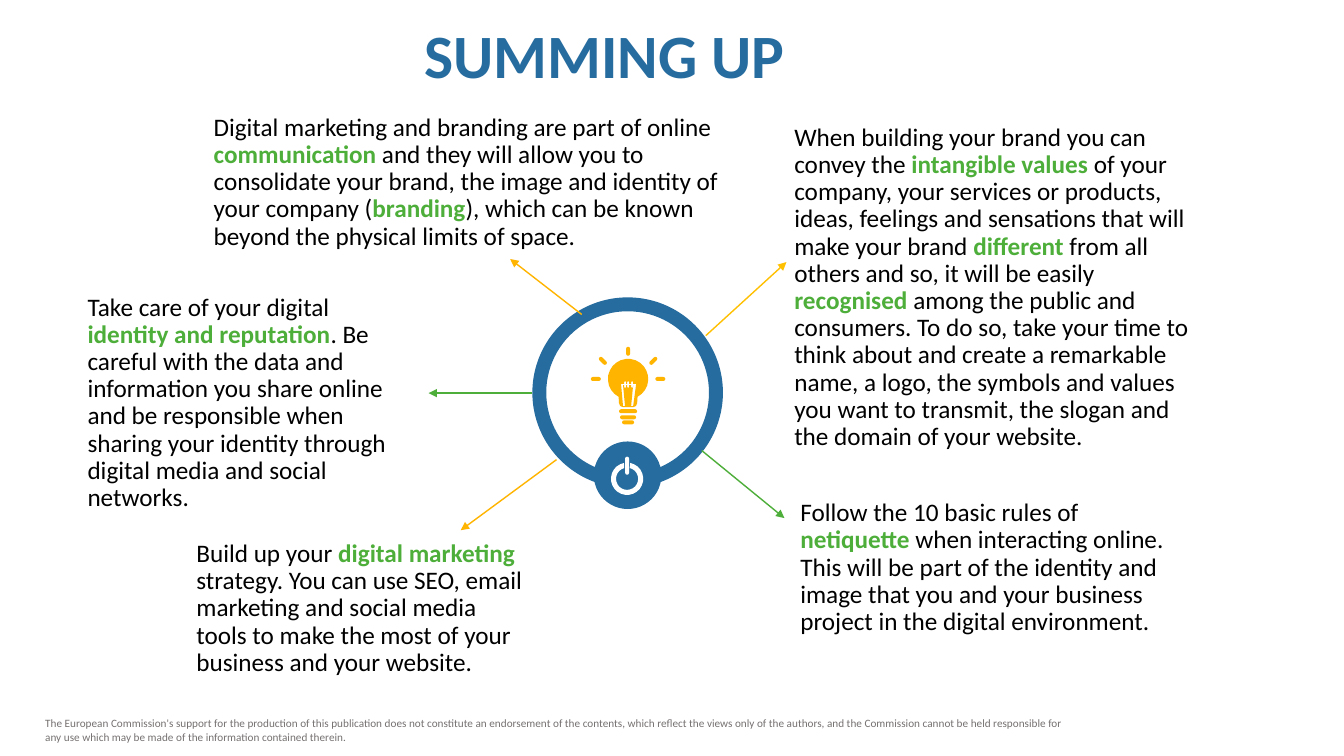
import math

from lxml import etree
from pptx import Presentation
from pptx.dml.color import RGBColor
from pptx.enum.shapes import MSO_CONNECTOR, MSO_SHAPE
from pptx.enum.text import MSO_ANCHOR
from pptx.oxml.ns import qn
from pptx.util import Inches, Pt

STRAIGHT = MSO_CONNECTOR.STRAIGHT
DONUT, OVAL = MSO_SHAPE.DONUT, MSO_SHAPE.OVAL
TOP, MIDDLE = MSO_ANCHOR.TOP, MSO_ANCHOR.MIDDLE
FONT = "Calibri"
UNITS = 1000  # outline units to the inch
COLORS = {
    "blue": "266C9F",
    "green": "4EAE3A",
    "yellow": "FFB500",
    "amber": "FFC000",
    "black": "000000",
    "grey": "767171",
    "white": "FFFFFF",
}
RGB = {name: RGBColor.from_string(value) for name, value in COLORS.items()}


def arc(x, y, radius, start, end, step=15):
    """Points along a circle, with angles in degrees clockwise from the right."""
    steps = math.ceil(abs(end - start) / step)
    angles = [math.radians(start + (end - start) * i / steps) for i in range(steps + 1)]
    return [(x + radius * math.cos(a), y + radius * math.sin(a)) for a in angles]


def capsule(x1, y1, x2, y2, radius=0.02):
    """Outline of a bar with round ends."""
    angle = math.degrees(math.atan2(y2 - y1, x2 - x1))
    return (arc(x2, y2, radius, angle - 90, angle + 90, 45)
            + arc(x1, y1, radius, angle + 90, angle + 270, 45))


deck = Presentation()
deck.slide_width, deck.slide_height = Inches(13.33), Inches(7.5)
page = deck.slides.add_slide(deck.slide_layouts[6])

# Central ring and power disc
for kind, left, top, size in ((DONUT, 5.28, 2.95, 1.89), (OVAL, 5.89, 4.38, 0.67)):
    ring = page.shapes.add_shape(kind, Inches(left), Inches(top), Inches(size), Inches(size))
    if kind == DONUT:
        ring.adjustments[0] = 0.073
    ring.shadow.inherit = False
    ring.fill.solid()
    ring.fill.fore_color.rgb = RGB["blue"]
    ring.line.fill.background()

# Light bulb: glass, filament, base and rays
bulb_x, bulb_y = 6.23, 3.76
glass = (arc(bulb_x, bulb_y, 0.2, 118, 422)
         + arc(6.28, 4.0, 0.04, 0, 90, 45) + arc(6.18, 4.0, 0.04, 90, 180, 45))
prongs = (6.2, 6.23, 6.27)
filament = [(6.16, 3.81)]
for x in prongs:
    filament += [(x - 0.01, 3.81), (x - 0.01, 3.79), (x, 3.78), (x + 0.01, 3.79), (x + 0.01, 3.81)]
filament += [(6.31, 3.81), (6.28, 4.03), (6.26, 4.03), (6.28, 3.82)]
for x in reversed(prongs):
    filament += [(x + 0.01, 3.82), (x + 0.01, 3.84), (x, 3.85), (x - 0.01, 3.84), (x - 0.01, 3.82)]
filament += [(6.18, 3.82), (6.2, 4.03), (6.18, 4.03)]
bulb = [glass, filament, capsule(bulb_x, 3.46, bulb_x, 3.51)]
for y, half in ((4.08, 0.07), (4.14, 0.06), (4.19, 0.04)):
    bulb.append(capsule(bulb_x - half, y, bulb_x + half, y))
for side in (-1, 1):
    bulb.append(capsule(bulb_x + side * 0.29, bulb_y, bulb_x + side * 0.35, bulb_y))
    bulb.append(capsule(bulb_x + side * 0.23, 3.6, bulb_x + side * 0.27, 3.56))

# Power symbol: open ring and bar
power = [arc(6.22, 4.75, 0.16, -79, 259) + arc(6.22, 4.75, 0.11, 255, -75),
         capsule(6.22, 4.55, 6.22, 4.69)]

for outlines, color in ((bulb, "yellow"), (power, "white")):
    builder = None
    for outline in outlines:
        points = [(x * UNITS, y * UNITS) for x, y in outline]
        if builder is None:
            builder = page.shapes.build_freeform(*points[0], scale=Inches(1) / UNITS)
        else:
            builder.move_to(*points[0])
        builder.add_line_segments(points[1:], close=True)
    icon = builder.convert_to_shape()
    icon.shadow.inherit = False
    icon.fill.solid()
    icon.fill.fore_color.rgb = RGB[color]
    icon.line.fill.background()

# Arrows from the ring to the messages
arrows = (
    (5.28, 3.9, 4.25, 3.9, "green"),
    (6.96, 4.47, 7.78, 5.14, "green"),
    (5.77, 3.12, 5.06, 2.57, "yellow"),
    (7.0, 3.33, 7.8, 2.6, "amber"),
    (5.52, 4.56, 4.57, 5.26, "yellow"),
)
for x1, y1, x2, y2, color in arrows:
    arrow = page.shapes.add_connector(STRAIGHT, Inches(x1), Inches(y1), Inches(x2), Inches(y2))
    arrow.line.color.rgb = RGB[color]
    arrow.line.width = Pt(1)
    etree.SubElement(arrow.line._get_or_add_ln(), qn("a:tailEnd"), type="triangle")
    etree.SubElement(arrow._element.spPr, qn("a:effectLst"))

# Texts: place, size, colour, anchor, line spacing, then plain and highlighted spans in turn
message = (18, "black", MIDDLE, 0.9)
texts = (
    ((0.35, 7.06, 10.46, 0.37), (8, "grey", TOP, 1.0), (
        "The European Commission's support for the production of this publication does not "
        "constitute an endorsement of the contents, which reflect the views only of the authors, "
        "and the Commission cannot be held responsible for any use which may be made of the "
        "information contained therein.",)),
    ((4.11, 0.2, 3.8, 0.79), (44, "blue", TOP, 0.9), ("SUMMING UP",)),
    ((1.85, 5.31, 3.44, 1.46), message, (
        "Build up your ", "digital marketing ",
        "strategy. You can use SEO, email marketing and social media tools to make the most of "
        "your business and your website.")),
    ((7.78, 1.17, 4.26, 3.37), message, (
        "When building your brand you can convey the ", "intangible values",
        " of your company, your services or products, ideas, feelings and sensations that will "
        "make your brand ", "different", " from all others and so, it will be easily ",
        "recognised",
        " among the public and consumers. To do so, take your time to think about and create a "
        "remarkable name, a logo, the symbols and values you want to transmit, the slogan and "
        "the domain of your website.")),
    ((7.84, 4.91, 3.9, 1.73), (18, "black", TOP, 0.9), (
        "Follow the 10 basic rules of ", "netiquette",
        " when interacting online. This will be part of the identity and image that you and "
        "your business project in the digital environment.")),
    ((2.02, 1.08, 5.22, 1.46), message, (
        "Digital marketing and branding are part of online ", "communication",
        " and they will allow you to consolidate your brand, the image and identity of your "
        "company (", "branding", "), which can be known beyond the physical limits of space.")),
    ((0.77, 2.86, 3.37, 2.28), message, (
        "Take care of your digital ", "identity and reputation",
        ". Be careful with the data and information you share online and be responsible when "
        "sharing your identity through digital media and social networks.")),
)
for place, (size, color, anchor, spacing), spans in texts:
    box = page.shapes.add_textbox(*map(Inches, place))
    box.text_frame.word_wrap = True
    box.text_frame.vertical_anchor = anchor
    para = box.text_frame.paragraphs[0]
    para.line_spacing = spacing
    for index, words in enumerate(spans):
        highlighted = index % 2 == 1
        span = para.add_run()
        span.text = words
        span.font.name = FONT
        span.font.size = Pt(size)
        span.font.bold = highlighted or color == "blue"
        span.font.color.rgb = RGB["green" if highlighted else color]

deck.save("out.pptx")
